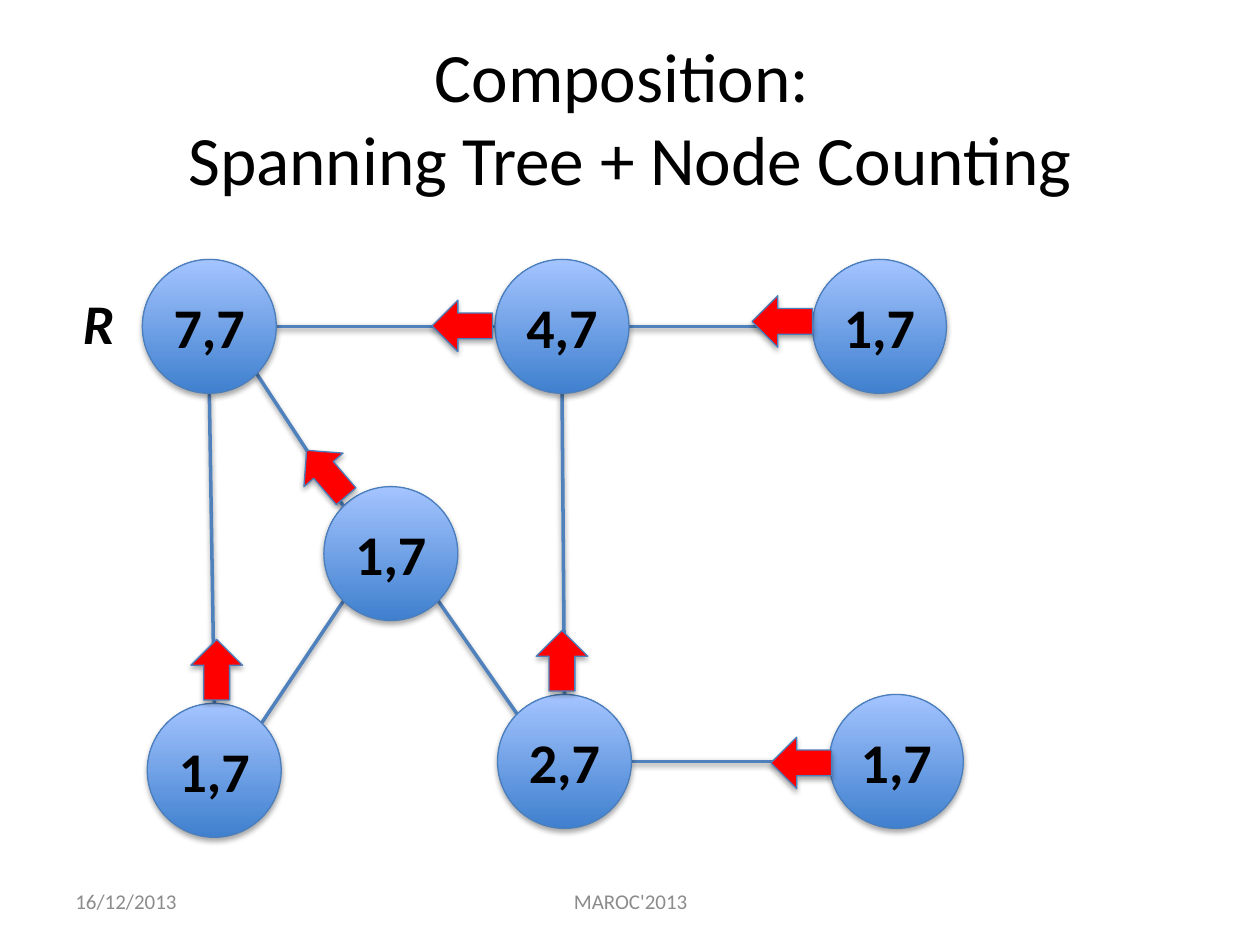
"""Build a slide of a spanning tree whose nodes hold subtree and total counts."""
from dataclasses import dataclass
from math import atan2, cos, pi, sin

from lxml import etree
from pptx import Presentation
from pptx.dml.color import RGBColor
from pptx.enum.shapes import MSO_CONNECTOR, MSO_SHAPE
from pptx.enum.text import MSO_ANCHOR, PP_ALIGN
from pptx.oxml.ns import qn
from pptx.util import Cm, Pt

LINE = MSO_CONNECTOR.STRAIGHT
OVAL = MSO_SHAPE.OVAL
ARROW = MSO_SHAPE.RIGHT_ARROW
MIDDLE = MSO_ANCHOR.MIDDLE
TOP = MSO_ANCHOR.TOP
LEFT = PP_ALIGN.LEFT
CENTER = PP_ALIGN.CENTER

FONT = "Calibri"
COLORS = {
    "text": "000000",
    "foot": "8C8C8C",
    "edge": "4F81BD",
    "rim": "4B7EBC",
    "dark": "3F80CE",
    "light": "A4C4FF",
    "arrow": "FF0000",
}
SIZE = 2.7
LONG, WIDE = 1.22, 1.04


@dataclass(frozen=True)
class Node:
    """A labelled circle by its centre."""
    text: str
    x: float
    y: float


@dataclass(frozen=True)
class Arrow:
    """A block arrow by its centre and turn."""
    x: float
    y: float
    turn: float


@dataclass(frozen=True)
class Label:
    """A text box with its style."""
    text: str
    box: tuple[float, float, float, float]
    size: float
    color: str = "text"
    align: PP_ALIGN = CENTER
    anchor: MSO_ANCHOR = MIDDLE
    strong: bool = False
    wrap: bool = True


NODES = {
    "root": Node("7,7", 4.22, 6.58),
    "north": Node("4,7", 11.33, 6.58),
    "east": Node("1,7", 17.73, 6.58),
    "mid": Node("1,7", 7.88, 11.16),
    "west": Node("1,7", 4.32, 15.53),
    "south": Node("2,7", 11.38, 15.35),
    "end": Node("1,7", 18.07, 15.35),
}
EDGES = [
    ("root", "mid"), ("north", "south"), ("mid", "south"), ("root", "west"),
    ("mid", "west"), ("root", "north"), ("north", "east"), ("end", "south"),
]
ARROWS = [
    Arrow(15.77, 6.48, 180), Arrow(16.15, 15.38, 180), Arrow(6.58, 9.54, 229.3),
    Arrow(9.32, 6.57, 180), Arrow(11.33, 13.32, 270), Arrow(4.37, 13.5, 270),
]
LABELS = [
    Label("16/12/2013", (1.27, 17.65, 5.92, 1.02), 12, "foot", LEFT),
    Label("MAROC'2013", (8.69, 17.65, 8.05, 1.02), 12, "foot"),
    Label("Composition: \vSpanning Tree + Node Counting",
          (1.27, 0.76, 22.86, 3.18), 39.6),
    Label("R", (1.42, 5.69, 1.42, 1.63), 32, align=LEFT, anchor=TOP,
          strong=True, wrap=False),
]


def tint(name: str) -> RGBColor:
    """Look up a colour."""
    return RGBColor.from_string(COLORS[name])


def shade(item, gap: int, alpha: int) -> None:
    """Give an item a soft shadow below it."""
    effects = etree.SubElement(item._element.spPr, qn("a:effectLst"))
    outer = etree.SubElement(effects, qn("a:outerShdw"), blurRad="40000",
                             dist=str(gap), dir="5400000", rotWithShape="0")
    black = etree.SubElement(outer, qn("a:srgbClr"), val="000000")
    etree.SubElement(black, qn("a:alpha"), val=str(alpha * 1000))


def style(shape, size: float, color: str, align: PP_ALIGN, bold: bool,
          slant: bool = False) -> None:
    """Format all text of a shape."""
    for part in shape.text_frame.paragraphs:
        part.alignment = align
        for run in part.runs:
            run.font.name = FONT
            run.font.size = Pt(size)
            run.font.bold = bold
            run.font.italic = slant
            run.font.color.rgb = tint(color)


def add_label(shapes, label: Label) -> None:
    """Draw a text box."""
    box = shapes.add_textbox(*map(Cm, label.box))
    frame = box.text_frame
    frame.text = label.text
    frame.word_wrap = label.wrap
    frame.vertical_anchor = label.anchor
    style(box, label.size, label.color, label.align, label.strong, label.strong)


def add_edge(shapes, start: Node, end: Node) -> None:
    """Join two nodes at the rim points nearest to their direction."""
    step = pi / 4
    angle = round(atan2(end.y - start.y, end.x - start.x) / step) * step
    dx, dy = SIZE / 2 * cos(angle), SIZE / 2 * sin(angle)
    edge = shapes.add_connector(LINE, Cm(start.x + dx), Cm(start.y + dy),
                                Cm(end.x - dx), Cm(end.y - dy))
    edge.line.color.rgb = tint("edge")
    edge.line.width = Pt(2)
    shade(edge, 20000, 38)


def add_block(shapes, kind: MSO_SHAPE, x: float, y: float, width: float,
              height: float):
    """Draw a rimmed shape around a centre."""
    shape = shapes.add_shape(kind, Cm(x - width / 2), Cm(y - height / 2),
                             Cm(width), Cm(height))
    shape.line.color.rgb = tint("rim")
    shape.line.width = Pt(0.75)
    return shape


def add_node(shapes, node: Node) -> None:
    """Draw a node with its counts."""
    disc = add_block(shapes, OVAL, node.x, node.y, SIZE, SIZE)
    disc.fill.gradient()
    disc.fill.gradient_angle = 90
    for stop, name in zip(disc.fill.gradient_stops, ("dark", "light")):
        stop.color.rgb = tint(name)
    shade(disc, 23000, 35)
    frame = disc.text_frame
    frame.text = node.text
    frame.vertical_anchor = MIDDLE
    frame.margin_left = frame.margin_right = Cm(0.1)
    style(disc, 32, "text", CENTER, True)


def add_arrow(shapes, arrow: Arrow) -> None:
    """Draw an arrow towards the parent node."""
    block = add_block(shapes, ARROW, arrow.x, arrow.y, LONG, WIDE)
    block.rotation = arrow.turn
    block.fill.solid()
    block.fill.fore_color.rgb = tint("arrow")
    shade(block, 23000, 35)


def main() -> None:
    """Build and save the slide."""
    deck = Presentation()
    deck.slide_width, deck.slide_height = Cm(25.4), Cm(19.05)
    shapes = deck.slides.add_slide(deck.slide_layouts[6]).shapes
    for label in LABELS:
        add_label(shapes, label)
    for start, end in EDGES:
        add_edge(shapes, NODES[start], NODES[end])
    for node in NODES.values():
        add_node(shapes, node)
    for arrow in ARROWS:
        add_arrow(shapes, arrow)
    deck.save("out.pptx")


if __name__ == "__main__":
    main()
